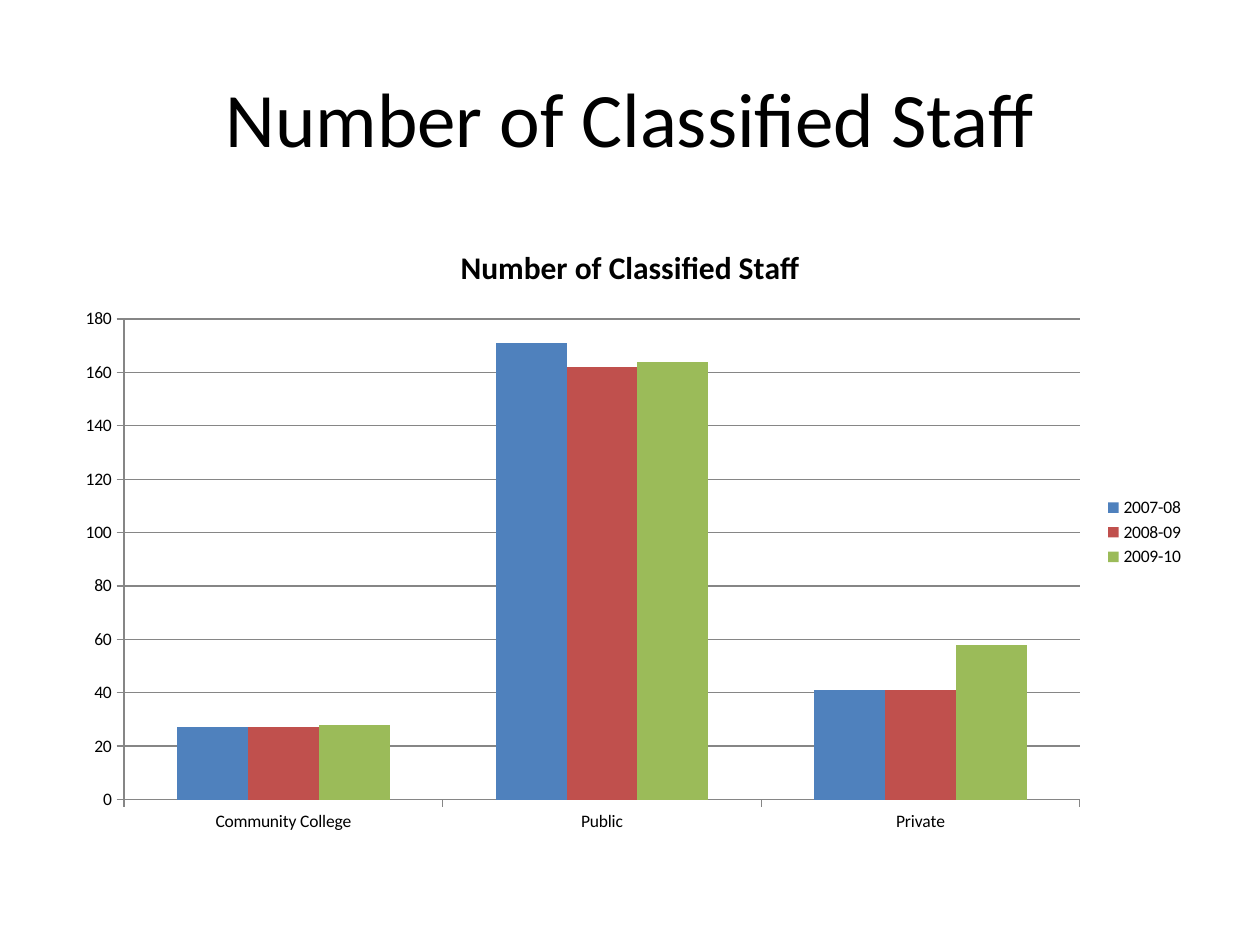
"""Build a slide with a clustered column chart of classified staff numbers."""
from typing import NamedTuple

from pptx import Presentation
from pptx.chart.data import CategoryChartData
from pptx.dml.color import RGBColor
from pptx.enum.chart import XL_CHART_TYPE, XL_LEGEND_POSITION, XL_TICK_MARK
from pptx.enum.text import MSO_ANCHOR, PP_ALIGN
from pptx.util import Pt

COLUMNS = XL_CHART_TYPE.COLUMN_CLUSTERED
RIGHT = XL_LEGEND_POSITION.RIGHT
OUTSIDE = XL_TICK_MARK.OUTSIDE
MIDDLE = MSO_ANCHOR.MIDDLE
CENTER = PP_ALIGN.CENTER

BLACK = RGBColor(0x00, 0x00, 0x00)
GRAY = RGBColor(0x86, 0x86, 0x86)
BLUE = RGBColor(0x4F, 0x81, 0xBD)
RED = RGBColor(0xC0, 0x50, 0x4D)
GREEN = RGBColor(0x9B, 0xBB, 0x59)

FONT = "Calibri"
TITLE = "Number of Classified Staff"
SECTORS = ("Community College", "Public", "Private")


class Year(NamedTuple):
    name: str
    staff: tuple[int, ...]
    color: RGBColor


YEARS = (
    Year("2007-08", (27, 171, 41), BLUE),
    Year("2008-09", (27, 162, 41), RED),
    Year("2009-10", (28, 164, 58), GREEN),
)


def set_font(font, size: int, bold: bool = False) -> None:
    font.name = FONT
    font.size = Pt(size)
    font.bold = bold
    font.color.rgb = BLACK


def set_line(line) -> None:
    line.color.rgb = GRAY
    line.width = Pt(0.75)


def add_title(slide) -> None:
    sp = slide.shapes.title
    sp.left, sp.top, sp.width, sp.height = Pt(36), Pt(21.6), Pt(648), Pt(90)
    tf = sp.text_frame
    tf.text = TITLE
    tf.vertical_anchor = MIDDLE
    p = tf.paragraphs[0]
    p.alignment = CENTER
    set_font(p.font, 44)


def add_staff_chart(slide) -> None:
    data = CategoryChartData()
    data.categories = SECTORS
    for year in YEARS:
        data.add_series(year.name, year.staff)
    frame = slide.shapes.add_chart(COLUMNS, Pt(36), Pt(126), Pt(648), Pt(356.4), data)
    chart = frame.chart
    set_font(chart.font, 10)

    chart.has_title = True
    tf = chart.chart_title.text_frame
    tf.text = TITLE
    set_font(tf.paragraphs[0].font, 18, bold=True)
    chart.chart_title.include_in_layout = False

    chart.has_legend = True
    chart.legend.position = RIGHT
    chart.legend.include_in_layout = False

    for axis in (chart.category_axis, chart.value_axis):
        axis.major_tick_mark = OUTSIDE
        set_line(axis.format.line)
    axis = chart.value_axis
    axis.minimum_scale, axis.maximum_scale, axis.major_unit = 0, 180, 20
    axis.has_major_gridlines = True
    set_line(axis.major_gridlines.format.line)

    plot = chart.plots[0]
    plot.gap_width = 150
    plot.vary_by_categories = False
    for series, year in zip(plot.series, YEARS):
        series.format.fill.solid()
        series.format.fill.fore_color.rgb = year.color


def main() -> None:
    prs = Presentation()
    prs.slide_width, prs.slide_height = Pt(720), Pt(540)
    slide = prs.slides.add_slide(prs.slide_layouts[5])
    add_title(slide)
    add_staff_chart(slide)
    prs.save("out.pptx")


if __name__ == "__main__":
    main()
